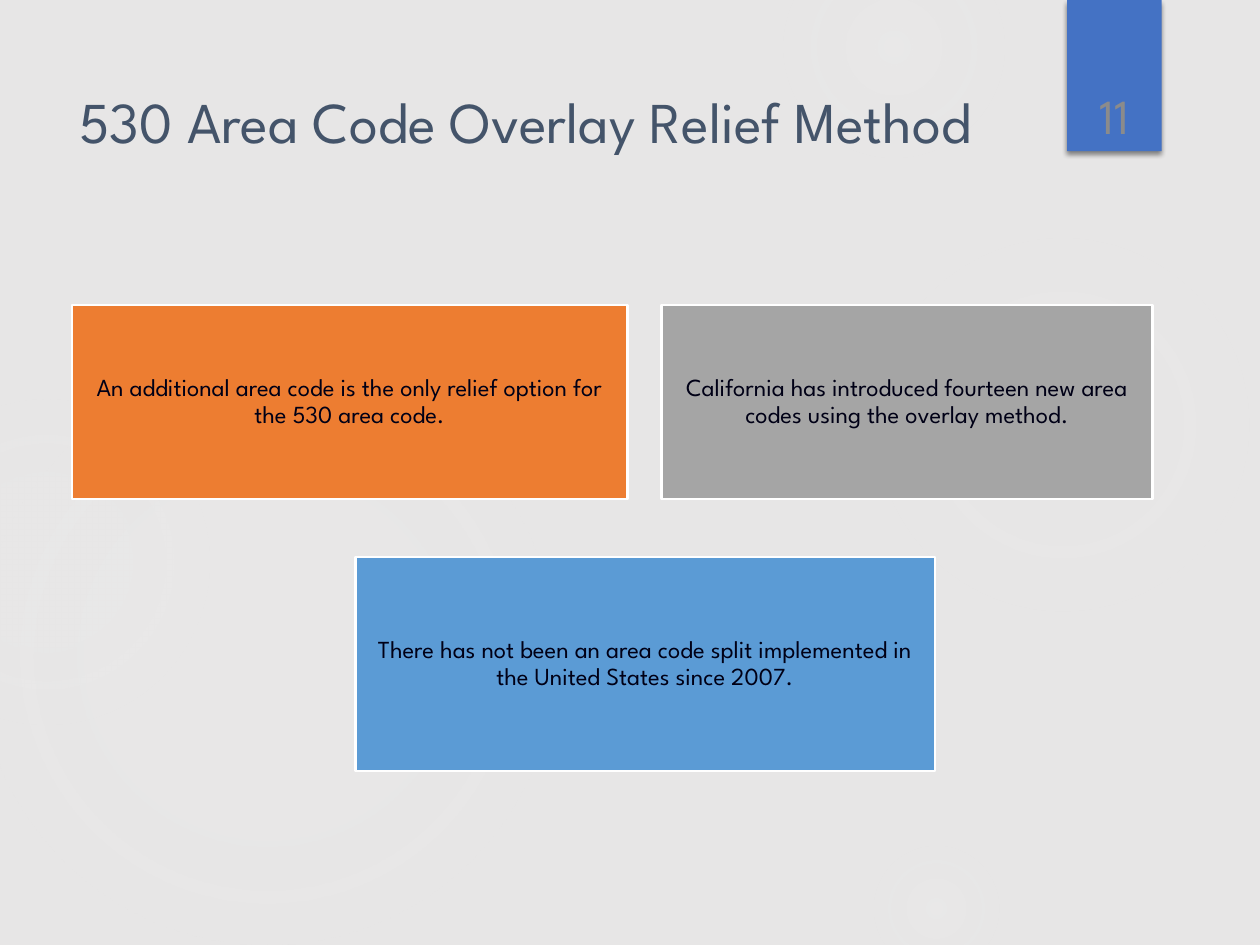
from pptx import Presentation
from pptx.dml.color import RGBColor
from pptx.enum.shapes import MSO_SHAPE as Shape
from pptx.enum.text import MSO_ANCHOR as Anchor, PP_ALIGN as Align
from pptx.oxml import parse_xml
from pptx.oxml.ns import nsdecls, qn
from pptx.util import Inches, Pt

FONT = "League Spartan"
BACKGROUND = RGBColor(0xE7, 0xE6, 0xE6)
TAB_BLUE = RGBColor(0x44, 0x72, 0xC4)
NUMBER_GRAY = RGBColor(0x8B, 0x8B, 0x8B)
TITLE_SLATE = RGBColor(0x44, 0x54, 0x6A)
INK = RGBColor(0x00, 0x00, 0x16)
WHITE = RGBColor(0xFF, 0xFF, 0xFF)
ORANGE = RGBColor(0xED, 0x7D, 0x31)
GRAY = RGBColor(0xA5, 0xA5, 0xA5)
BLUE = RGBColor(0x5B, 0x9B, 0xD5)


def add_block(kind, left, top, width, height, fill=None):
    block = slide.shapes.add_shape(
        kind, Inches(left), Inches(top), Inches(width), Inches(height))
    block.shadow.inherit = False
    block.line.fill.background()
    if fill is None:
        block.fill.background()
    else:
        block.fill.solid()
        block.fill.fore_color.rgb = fill
    return block


def write(frame, text, size, color, align, spacing=0.9):
    frame.word_wrap = True
    paragraph = frame.paragraphs[0]
    paragraph.text = text
    paragraph.alignment = align
    paragraph.line_spacing = spacing
    paragraph.font.name = FONT
    paragraph.font.size = Pt(size)
    paragraph.font.color.rgb = color
    return paragraph


prs = Presentation()
prs.slide_width, prs.slide_height = Inches(10), Inches(7.5)
slide = prs.slides.add_slide(prs.slide_layouts[6])
slide.background.fill.solid()
slide.background.fill.fore_color.rgb = BACKGROUND

# Faint background glows: left, top, diameter, (position %, opacity %) stops
glows = [
    (6.89, 1.83, 3.08, [(0, 7), (36, 6), (69, 0)]),
    (6.22, -0.5, 1.75, [(0, 14), (36, 7), (73, 0)]),
    (6.89, 6.67, 1.08, [(0, 14), (36, 7), (66, 0)]),
    (-0.17, 2.92, 4.58, [(0, 11), (36, 10), (75, 0)]),
    (-0.92, 3.17, 2.58, [(0, 8), (36, 8), (72, 0)]),
]
for left, top, diameter, stops in glows:
    glow = add_block(Shape.OVAL, left, top, diameter, diameter)
    stop_xml = "".join(
        f'<a:gs pos="{pos * 1000}"><a:srgbClr val="F5F5F5">'
        f'<a:alpha val="{opacity * 1000}"/></a:srgbClr></a:gs>'
        for pos, opacity in stops)
    gradient = parse_xml(
        f'<a:gradFill {nsdecls("a")}><a:gsLst>{stop_xml}</a:gsLst>'
        '<a:path path="circle"><a:fillToRect l="50000" t="50000" '
        'r="50000" b="50000"/></a:path></a:gradFill>')
    properties = glow._element.spPr
    properties.replace(properties.find(qn("a:noFill")), gradient)

# Page number tab with a soft shadow below
tab = add_block(Shape.RECTANGLE, 8.47, 0, 0.75, 1.2, TAB_BLUE)
tab._element.spPr.find(qn("a:effectLst")).append(parse_xml(
    f'<a:outerShdw {nsdecls("a")} blurRad="{Pt(3)}" dist="{Pt(2)}" '
    'dir="5400000" rotWithShape="0"><a:srgbClr val="000000">'
    '<a:alpha val="45000"/></a:srgbClr></a:outerShdw>'))
page_number = slide.shapes.add_textbox(
    Inches(8.47), Inches(0.61), Inches(0.75), Inches(0.6))
page_number.text_frame.vertical_anchor = Anchor.MIDDLE
write(page_number.text_frame, "11", 28, NUMBER_GRAY, Align.CENTER, 1.0)

# Title
title = slide.shapes.add_textbox(
    Inches(0.53), Inches(0.69), Inches(7.59), Inches(1.11))
write(title.text_frame, "530 Area Code Overlay Relief Method", 33,
      TITLE_SLATE, Align.LEFT)

# Statement boxes
statements = [
    (0.57, 2.42, 4.41, 1.54, ORANGE,
     "An additional area code is the only relief option for the 530 area code."),
    (5.25, 2.42, 3.9, 1.54, GRAY,
     "California has introduced fourteen new area codes using the overlay method."),
    (2.82, 4.42, 4.6, 1.7, BLUE,
     "There has not been an area code split implemented in the United States "
     "since 2007."),
]
for left, top, width, height, color, text in statements:
    statement = add_block(Shape.RECTANGLE, left, top, width, height, color)
    statement.line.color.rgb = WHITE
    statement.line.width = Pt(1.5)
    frame = statement.text_frame
    frame.vertical_anchor = Anchor.MIDDLE
    frame.margin_left = frame.margin_right = Inches(0.08)
    frame.margin_top = frame.margin_bottom = Inches(0.08)
    write(frame, text, 14, INK, Align.CENTER)

prs.save("out.pptx")
